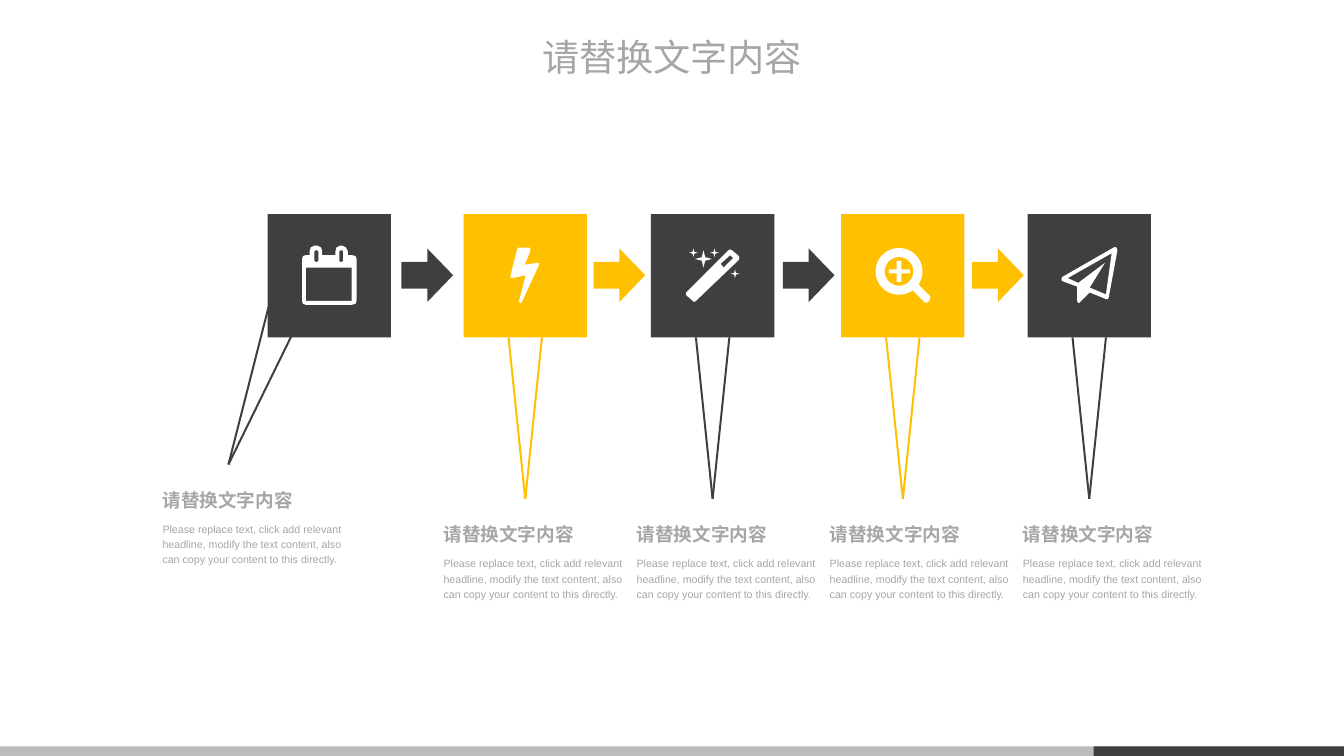
"""Build a five-step process slide with icon squares, arrows and captions."""
from math import cos, radians, sin

from lxml.etree import SubElement
from pptx import Presentation
from pptx.dml.color import RGBColor as Rgb
from pptx.enum.shapes import MSO_CONNECTOR as Link, MSO_SHAPE as Kind
from pptx.enum.text import MSO_ANCHOR as Anchor, PP_ALIGN as Align
from pptx.oxml.ns import qn
from pptx.util import Pt


def arc(x, y, r, start=0, end=360):
    return [(x + r * cos(radians(a)), y + r * sin(radians(a)))
            for a in range(start, end, 10)]


def star(x, y, r):
    return [(x + d * cos(radians(45 * i)), y + d * sin(radians(45 * i)))
            for i, d in enumerate([r, r * 0.28] * 4)]


THEME = {
    "font": "Arial", "dark": "3F3F3F", "gold": "FFC000", "white": "FFFFFF",
    "grey": "A6A6A6", "bar": "BCBCBC",
    "title": 28, "head": 14, "body": 8, "line": 1.5,
}
HEAD = "请替换文字内容"
BODY = ("Please replace text, click add relevant headline, modify the text "
        "content, also can copy your content to this directly.")

CALENDAR = [
    [(93, 91), (92, 94), (88, 95), (40, 95), (37, 94), (36, 91), (36, 47),
     (37, 44), (40, 43), (44, 43), (44, 39), (45, 35), (49, 33), (52, 33),
     (56, 35), (57, 39), (57, 43), (71, 43), (71, 39), (72, 35), (76, 33),
     (78, 33), (82, 35), (84, 39), (84, 43), (88, 43), (92, 44), (93, 47)],
    [(88, 91), (88, 56), (40, 56), (40, 91)],
    *[[(x + 4, 39), (x + 3, 38), (x + 1, 38), (x, 39),
       (x, 49), (x + 1, 50), (x + 3, 50), (x + 4, 49)] for x in (49, 75)],
]
BOLT = [
    [(79, 53), (61, 92), (60, 93), (59, 93), (58, 91), (65, 64), (51, 67),
     (50, 67), (49, 66), (49, 65), (56, 37), (57, 35), (69, 35), (70, 37),
     (70, 38), (64, 53), (78, 51), (79, 51)],
]
WAND = [
    [(92, 48), (47, 91), (45, 92), (44, 91), (37, 85), (36.5, 84), (37, 82),
     (81, 38), (83, 37), (85, 38), (92, 44), (92.5, 46)],
    [(86, 46), (83, 43), (73, 52), (76, 56)],
    star(44.5, 40.5, 4.5), star(66.5, 40.5, 4.5),
    star(88, 62.5, 4.5), star(55, 47, 9),
]
LENS = [
    arc(60.5, 60, 24.5, 55, 395)
    + [(81, 74), (93, 86), (93, 88), (92, 91), (89, 93), (87, 92), (75, 80)],
    arc(60.5, 60, 15),
    [(72, 58), (72, 62), (63, 62), (63, 71), (58, 71), (58, 62),
     (50, 62), (50, 58), (58, 58), (58, 49), (63, 49), (63, 58)],
]
PLANE = [
    [(94, 38), (85, 87), (84, 89), (82, 89), (65, 82), (55, 92), (54, 93),
     (53, 93), (52, 91), (52, 76), (36, 70), (35.5, 68), (36, 66), (90, 35),
     (91.5, 34.5), (93, 35)],
    [(88, 41), (42, 67), (53, 72), (81, 51), (65, 77), (82, 84)],
]
STEPS = [
    (201.6, "dark", CALENDAR), (349.2, "gold", BOLT), (490.32, "dark", WAND),
    (633.6, "gold", LENS), (774, "dark", PLANE),
]
ARROWS = [(302.4, "dark"), (447.12, "gold"), (589.68, "dark"), (732.24, "gold")]

WIDE, HIGH = 1012.32, 569.52
TOP, SIDE = 161.28, 92.88
BASE = TOP + SIDE
TIP, HALF = 375.84, 12.6
FIRST = [(172.08, 349.92), (202.32, 231.12), (226.08, 239.76)]
CAPS = [(122.4, 361.44)] + [(334.08 + 145.44 * i, 387.36) for i in range(4)]

deck = Presentation()
deck.slide_width, deck.slide_height = Pt(WIDE), Pt(HIGH)
shapes = deck.slides.add_slide(deck.slide_layouts[6]).shapes


def color(name):
    return Rgb.from_string(THEME[name])


def apply(item, form):
    for key, val in form.items():
        setattr(item, key, val)


def paint(shape, tone):
    shape.shadow.inherit = False
    shape.fill.solid()
    shape.fill.fore_color.rgb = color(tone)
    shape.line.fill.background()


def block(kind, box, tone):
    paint(shapes.add_shape(kind, *map(Pt, box)), tone)


def rule(start, end, tone):
    line = shapes.add_connector(Link.STRAIGHT, *map(Pt, (*start, *end)))
    line.line.color.rgb = color(tone)
    line.line.width = Pt(THEME["line"])
    SubElement(line._element.spPr, qn("a:effectLst"))


def icon(left, loops):
    fine = [[(x * 10, y * 10) for x, y in loop] for loop in loops]
    pen = shapes.build_freeform(*fine[0][0], scale=Pt(0.072))
    pen.add_line_segments(fine[0][1:])
    for loop in fine[1:]:
        pen.move_to(*loop[0])
        pen.add_line_segments(loop[1:])
    paint(pen.convert_to_shape(Pt(left), Pt(TOP)), "white")


def write(text, box, size, pad=0, gap=1.2, bold=False,
          align=Align.LEFT, anchor=Anchor.TOP):
    frame = shapes.add_textbox(*map(Pt, box)).text_frame
    apply(frame, {"word_wrap": True, "vertical_anchor": anchor,
                  "margin_left": 0, "margin_right": 0,
                  "margin_top": Pt(pad), "margin_bottom": Pt(pad)})
    para = frame.paragraphs[0]
    apply(para, {"alignment": align, "line_spacing": gap})
    run = para.add_run()
    run.text = text
    apply(run.font, {"name": THEME["font"], "size": Pt(THEME[size]),
                     "bold": bold})
    run.font.color.rgb = color("grey")


block(Kind.RECTANGLE, (0, 562.32, WIDE, 7.2), "bar")
block(Kind.RECTANGLE, (823.68, 562.32, 188.64, 7.2), "dark")

for i, (left, tone, loops) in enumerate(STEPS):
    mid = left + SIDE / 2
    tip, *ends = [(mid, TIP), (mid - HALF, BASE), (mid + HALF, BASE)] if i else FIRST
    for end in ends:
        rule(tip, end, tone)
    block(Kind.RECTANGLE, (left, TOP, SIDE, SIDE), tone)
    icon(left, loops)

for left, tone in ARROWS:
    block(Kind.RIGHT_ARROW, (left, 187.2, 38.88, 40.32), tone)

for left, top in CAPS:
    write(HEAD, (left, top, 105.12, 26.64), "head", pad=7.92, bold=True,
          anchor=Anchor.MIDDLE)
    write(BODY, (left, top + 30.6, 138.24, 33.84), "body")

write(HEAD, (393.84, 15.84, 224.64, 39.6), "title", gap=1.3, align=Align.CENTER)

deck.save("out.pptx")
